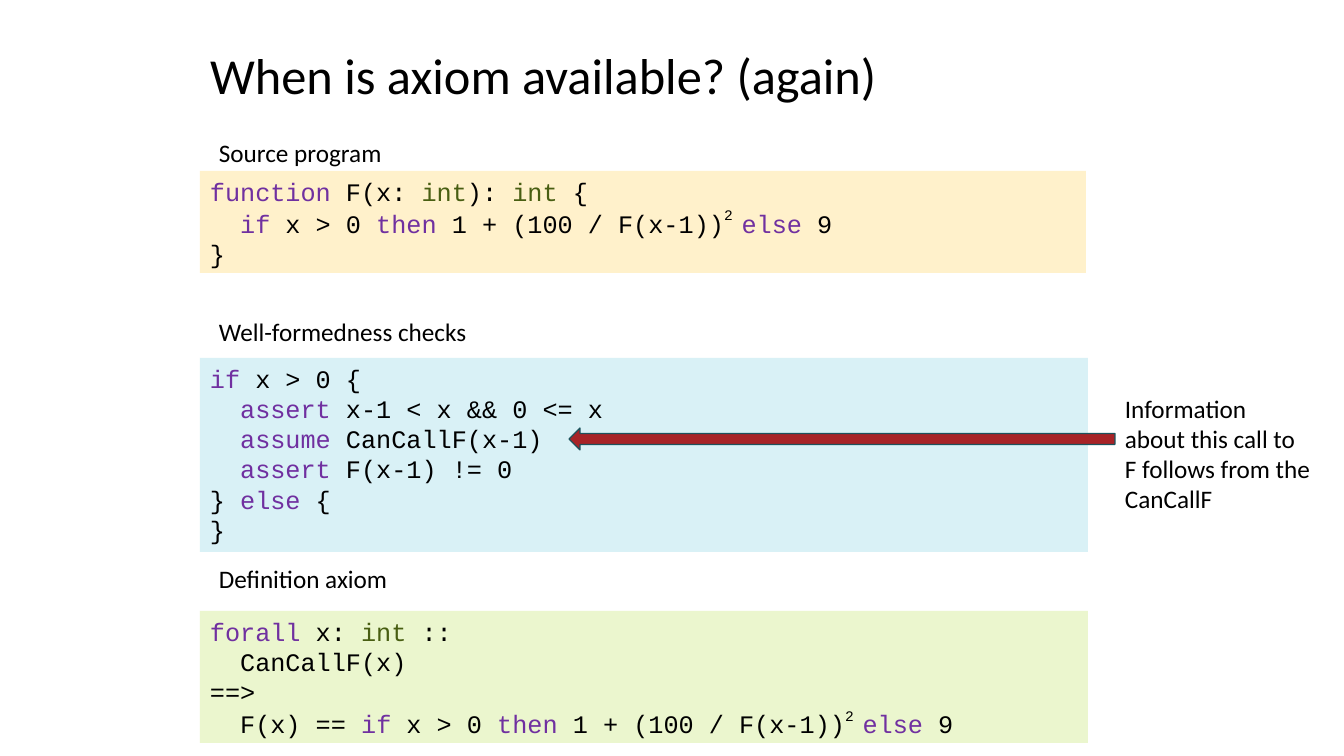
from pptx import Presentation
from pptx.dml.color import RGBColor
from pptx.enum.shapes import MSO_SHAPE
from pptx.enum.text import MSO_ANCHOR, MSO_AUTO_SIZE, PP_ALIGN
from pptx.util import Pt

RECTANGLE, LEFT_ARROW = MSO_SHAPE.RECTANGLE, MSO_SHAPE.LEFT_ARROW
LEFT, TOP, NO_FIT = PP_ALIGN.LEFT, MSO_ANCHOR.TOP, MSO_AUTO_SIZE.NONE
PX = 914400 / 100.8
BLACK, PURPLE, OLIVE = "000000", "7030A0", "485E12"
KEYWORDS = ["function", "if", "then", "else", "assert", "assume", "forall"]
WORD_COLORS = {**dict.fromkeys(KEYWORDS, PURPLE), "int": OLIVE}
SQUARE = "2 "


def emu(*lengths):
    return [round(length * PX) for length in lengths]


def write(box, text, size=18, font="Calibri"):
    frame = box.text_frame
    frame.word_wrap = True
    frame.auto_size = NO_FIT
    frame.vertical_anchor = TOP
    for index, line in enumerate(text.split("\n")):
        para = frame.paragraphs[0] if index == 0 else frame.add_paragraph()
        para.alignment = LEFT
        for piece in filter(None, line.split("|")):
            span = para.add_run()
            span.text = piece
            span.font.size = Pt(size)
            span.font.name = font
            span.font.color.rgb = RGBColor.from_string(WORD_COLORS.get(piece, BLACK))
            if piece == SQUARE:
                span.font._element.set("baseline", "50000")


deck = Presentation()
deck.slide_width, deck.slide_height = emu(1344, 756)
page = deck.slides.add_slide(deck.slide_layouts[5])

title = page.shapes.title
title.left, title.top, title.width, title.height = emu(200, 39, 808, 72)
write(title, "When is axiom available? (again)", size=36)

SOURCE = """|function| F(x: |int|): |int| {
  |if| x > 0 |then| 1 + (100 / F(x-1))|2 |else| 9
}"""
CHECKS = """|if| x > 0 {
  |assert| x-1 < x && 0 <= x
  |assume| CanCallF(x-1)
  |assert| F(x-1) != 0
} |else| {
}"""
AXIOM = """|forall| x: |int| ::
  CanCallF(x)
==>
  F(x) == |if| x > 0 |then| 1 + (100 / F(x-1))|2 |else| 9"""

sections = [
    ("Source program", 132, SOURCE, 171, 886, 102, "FFF1CB"),
    ("Well-formedness checks", 311, CHECKS, 358, 888, 194, "D9F1F6"),
    ("Definition axiom", 558, AXIOM, 611, 888, 132, "EBF6CE"),
]
for heading, heading_top, code, top, width, height, fill in sections:
    panel = page.shapes.add_shape(RECTANGLE, *emu(200, top, width, height))
    panel.shadow.inherit = False
    panel.fill.solid()
    panel.fill.fore_color.rgb = RGBColor.from_string(fill)
    panel.line.fill.background()
    write(panel, code, font="Courier New")
    label = page.shapes.add_textbox(*emu(209, heading_top, 284, 40))
    write(label, heading)

arrow = page.shapes.add_shape(LEFT_ARROW, *emu(569, 428, 546, 22))
arrow.shadow.inherit = False
arrow.fill.solid()
arrow.fill.fore_color.rgb = RGBColor.from_string("A72327")
arrow.line.color.rgb = RGBColor.from_string("1C525C")
arrow.line.width = Pt(0.85)

note = page.shapes.add_textbox(*emu(1115, 388, 206, 132))
write(note, "Information about this call to F follows from the CanCallF")

deck.save("out.pptx")
